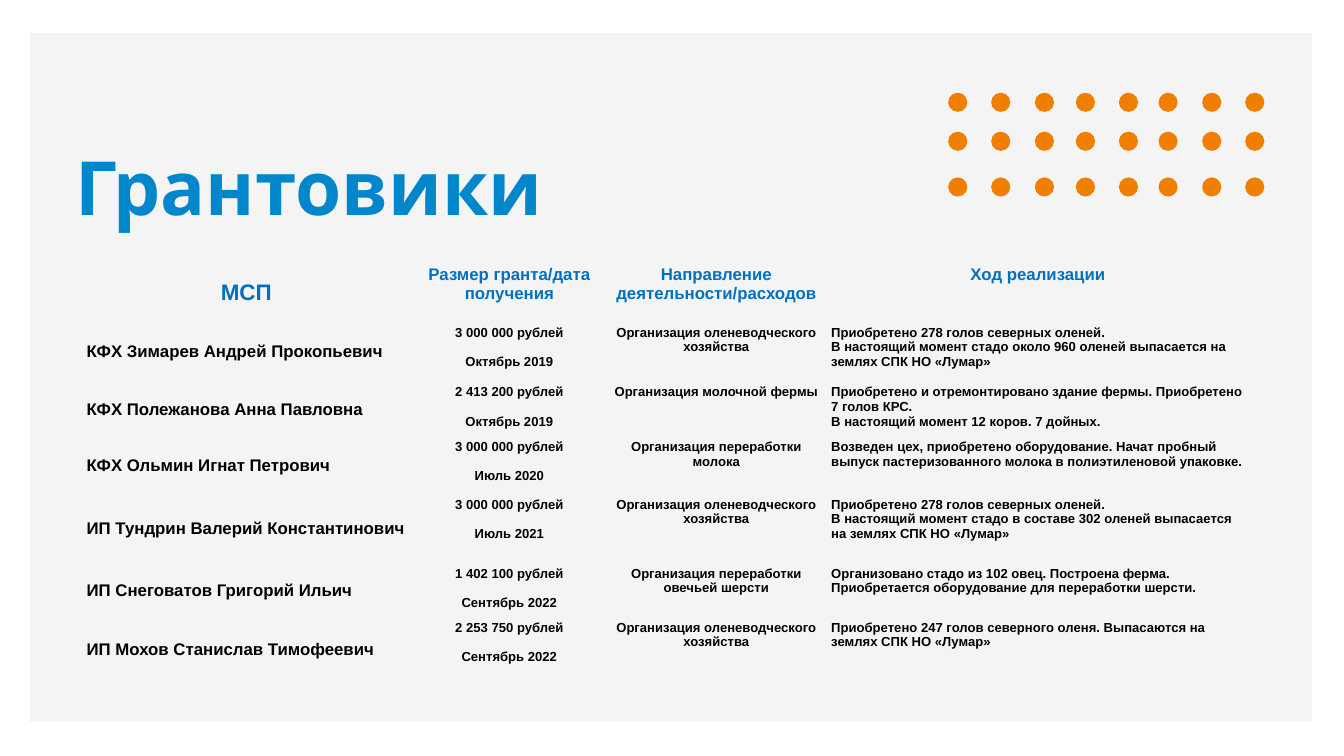
from dataclasses import dataclass
from itertools import product

from lxml.etree import SubElement
from pptx import Presentation
from pptx.dml.color import RGBColor
from pptx.enum.shapes import MSO_SHAPE
from pptx.enum.text import MSO_ANCHOR, MSO_AUTO_SIZE, PP_ALIGN
from pptx.oxml.ns import qn
from pptx.util import Inches, Length, Pt

# Slide grid: 200 columns by 112.5 rows of square units
SLIDE_WIDTH, SLIDE_HEIGHT = Inches(20), Inches(11.25)
GRID_COLUMNS = 200

WHITE = RGBColor(0xFF, 0xFF, 0xFF)
PANEL_GREY = RGBColor(0xF4, 0xF4, 0xF4)
TITLE_BLUE = RGBColor(0x00, 0x87, 0xCB)
HEADER_BLUE = RGBColor(0x00, 0x70, 0xC0)
DOT_ORANGE = RGBColor(0xF0, 0x7F, 0x00)
BLACK = RGBColor(0x00, 0x00, 0x00)


@dataclass(frozen=True)
class Grant:
    recipient: str
    amount: str
    date: str
    purpose: str
    progress: tuple[str, ...]


@dataclass(frozen=True)
class CellStyle:
    size: int
    color: RGBColor
    align: PP_ALIGN
    anchor: MSO_ANCHOR = MSO_ANCHOR.TOP
    margins: tuple[float, float, float, float] = (0.7, 0.5, 0.8, 0.5)
    paragraph_gap: int = 0


NAME_MARGINS = (0.1, 0.1, 0.1, 0)
NAME_HEADER = CellStyle(24, HEADER_BLUE, PP_ALIGN.CENTER, MSO_ANCHOR.MIDDLE, NAME_MARGINS)
HEADER = CellStyle(18, HEADER_BLUE, PP_ALIGN.CENTER)
NAME = CellStyle(18, BLACK, PP_ALIGN.LEFT, MSO_ANCHOR.MIDDLE, (0.8, 0.1, 0.1, 0))
AMOUNT = CellStyle(14, BLACK, PP_ALIGN.CENTER, paragraph_gap=16)
PURPOSE = CellStyle(14, BLACK, PP_ALIGN.CENTER)
PROGRESS = CellStyle(14, BLACK, PP_ALIGN.LEFT, margins=(0.9, 0.5, 0.8, 0.5))

HEADER_STYLES = (NAME_HEADER, HEADER, HEADER, HEADER)
GRANT_STYLES = (NAME, AMOUNT, PURPOSE, PROGRESS)
HEADERS = (
    "МСП",
    "Размер гранта/дата получения",
    "Направление деятельности/расходов",
    "Ход реализации",
)
REINDEER = "Организация оленеводческого хозяйства"
HERD_BOUGHT = "Приобретено 278 голов северных оленей."
GRANTS = (
    Grant("КФХ Зимарев Андрей Прокопьевич", "3 000 000 рублей", "Октябрь 2019", REINDEER,
          (HERD_BOUGHT,
           "В настоящий момент стадо около 960 оленей выпасается на землях СПК НО «Лумар»")),
    Grant("КФХ Полежанова Анна Павловна", "2 413 200 рублей", "Октябрь 2019",
          "Организация молочной фермы",
          ("Приобретено и отремонтировано здание фермы. Приобретено 7 голов КРС.",
           "В настоящий момент 12 коров. 7 дойных.")),
    Grant("КФХ Ольмин Игнат Петрович", "3 000 000 рублей", "Июль 2020",
          "Организация переработки молока",
          ("Возведен цех, приобретено оборудование. Начат пробный выпуск "
           "пастеризованного молока в полиэтиленовой упаковке.",)),
    Grant("ИП Тундрин Валерий Константинович", "3 000 000 рублей", "Июль 2021", REINDEER,
          (HERD_BOUGHT,
           "В настоящий момент стадо в составе 302 оленей выпасается на землях СПК НО «Лумар»")),
    Grant("ИП Снеговатов Григорий Ильич", "1 402 100 рублей", "Сентябрь 2022",
          "Организация переработки овечьей шерсти",
          ("Организовано стадо из 102 овец. Построена ферма. "
           "Приобретается оборудование для переработки шерсти.",)),
    Grant("ИП Мохов Станислав Тимофеевич", "2 253 750 рублей", "Сентябрь 2022", REINDEER,
          ("Приобретено 247 голов северного оленя. Выпасаются на землях СПК НО «Лумар»",)),
)

COLUMN_WIDTHS = (49.1, 29.3, 32.3, 63.4)
ROW_HEIGHTS = (8.9, 8.9, 8.1, 8.6, 10.3, 8, 9.6)
DOT_COLUMNS = (141.1, 147.5, 154, 160.1, 166.5, 172.4, 178.9, 185.3)
DOT_ROWS = (13.8, 19.6, 26.4)
DOT_SIZE = 2.85


def grid(units: float) -> Length:
    return Length(round(SLIDE_WIDTH * units / GRID_COLUMNS))


def add_filled(slide, kind: MSO_SHAPE, left: float, top: float,
               width: float, height: float, color: RGBColor):
    shape = slide.shapes.add_shape(kind, *map(grid, (left, top, width, height)))
    shape.shadow.inherit = False
    shape.fill.solid()
    shape.fill.fore_color.rgb = color
    shape.line.fill.background()
    return shape


def add_bold_run(paragraph, text: str, font_name: str, size: int, color: RGBColor) -> None:
    run = paragraph.add_run()
    run.text = text
    run.font.name = font_name
    run.font.size = Pt(size)
    run.font.bold = True
    run.font.color.rgb = color


def write_title(title) -> None:
    title.left, title.top, title.width, title.height = map(grid, (11.2, 11.2, 77, 18.8))
    frame = title.text_frame
    frame.auto_size = MSO_AUTO_SIZE.NONE
    frame.word_wrap = True
    frame.vertical_anchor = MSO_ANCHOR.TOP
    frame.margin_left = frame.margin_right = frame.margin_bottom = 0
    frame.margin_top = grid(9.7)
    heading = frame.paragraphs[0]
    heading.alignment = PP_ALIGN.LEFT
    heading.line_spacing = 1.0
    add_bold_run(heading, "Грантовики", "Cabin", 80, TITLE_BLUE)


def write_cell(cell, lines: tuple[str, ...], style: CellStyle) -> None:
    properties = cell._tc.get_or_add_tcPr()
    for side in ("a:lnL", "a:lnR", "a:lnT", "a:lnB"):
        SubElement(SubElement(properties, qn(side)), qn("a:noFill"))
    cell.fill.background()
    cell.vertical_anchor = style.anchor
    (cell.margin_left, cell.margin_top,
     cell.margin_right, cell.margin_bottom) = map(grid, style.margins)
    frame = cell.text_frame
    for index, line in enumerate(lines):
        paragraph = frame.add_paragraph() if index else frame.paragraphs[0]
        paragraph.alignment = style.align
        if index:
            paragraph.space_before = Pt(style.paragraph_gap)
        add_bold_run(paragraph, line, "Arial", style.size, style.color)


def add_grants_table(slide) -> None:
    table = slide.shapes.add_table(
        len(ROW_HEIGHTS), len(COLUMN_WIDTHS), grid(12.1), grid(39),
        grid(sum(COLUMN_WIDTHS)), grid(sum(ROW_HEIGHTS))).table
    table.first_row = table.horz_banding = False
    for column, width in zip(table.columns, COLUMN_WIDTHS):
        column.width = grid(width)

    contents = [(HEADER_STYLES, [(header,) for header in HEADERS])]
    for grant in GRANTS:
        contents.append((GRANT_STYLES, [(grant.recipient,), (grant.amount, grant.date),
                                        (grant.purpose,), grant.progress]))
    for row, height, (styles, texts) in zip(table.rows, ROW_HEIGHTS, contents):
        row.height = grid(height)
        for cell, lines, style in zip(row.cells, texts, styles):
            write_cell(cell, lines, style)


def main() -> None:
    deck = Presentation()
    deck.slide_width, deck.slide_height = SLIDE_WIDTH, SLIDE_HEIGHT
    slide = deck.slides.add_slide(deck.slide_layouts[5])
    slide.background.fill.solid()
    slide.background.fill.fore_color.rgb = WHITE

    # Grey panel behind the title
    title = slide.shapes.title
    panel = add_filled(slide, MSO_SHAPE.RECTANGLE, 4.5, 4.9, 190.7, 102.5, PANEL_GREY)
    title.element.addprevious(panel.element)
    write_title(title)

    # Dot pattern
    for top, left in product(DOT_ROWS, DOT_COLUMNS):
        add_filled(slide, MSO_SHAPE.OVAL, left, top, DOT_SIZE, DOT_SIZE, DOT_ORANGE)

    # Grant recipients
    add_grants_table(slide)
    deck.save("out.pptx")


if __name__ == "__main__":
    main()
